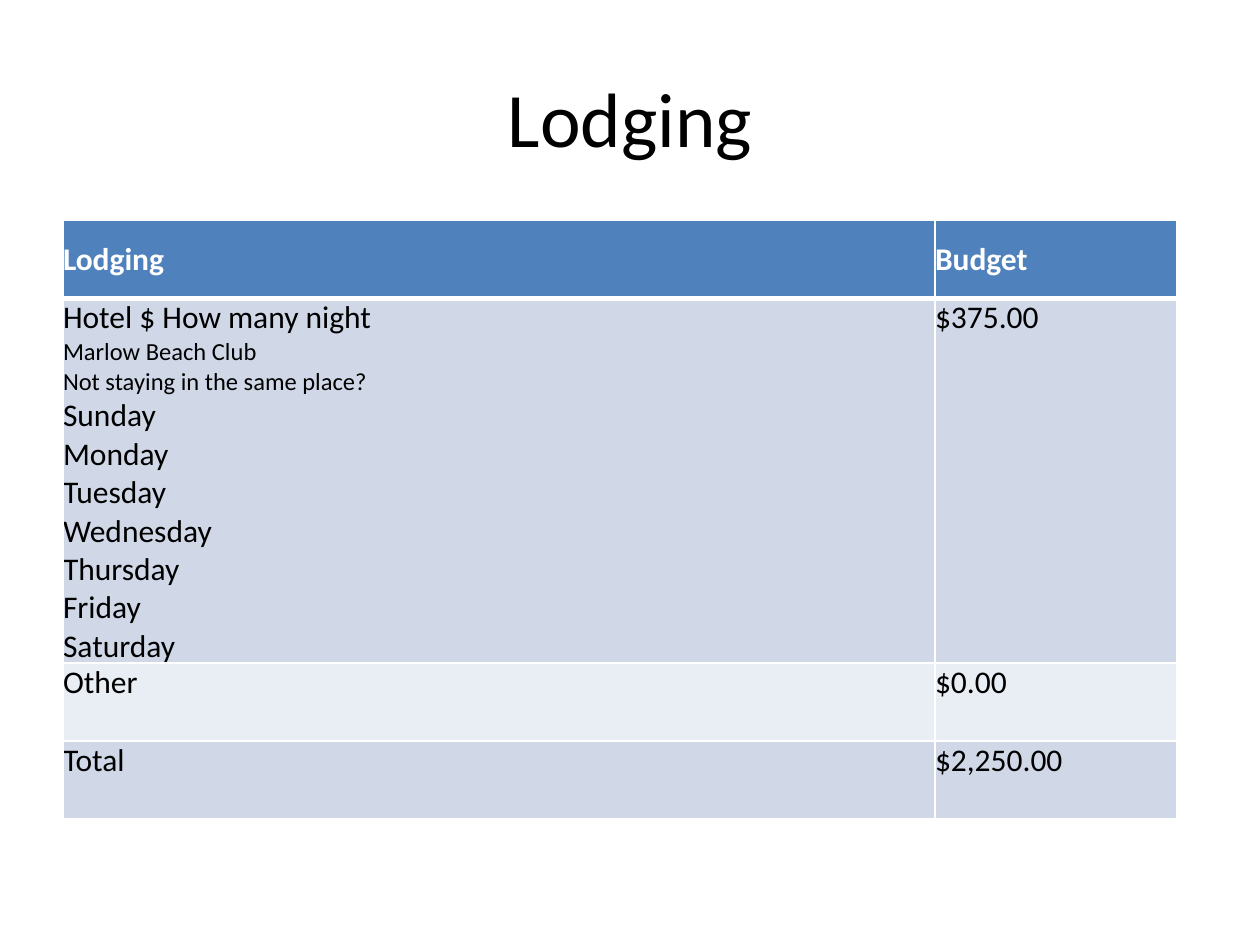
from dataclasses import dataclass

from lxml.etree import SubElement
from pptx import Presentation
from pptx.dml.color import RGBColor
from pptx.enum.text import MSO_ANCHOR as Anchor, PP_ALIGN as Align
from pptx.oxml.ns import qn
from pptx.util import Cm, Pt

FONT = "Calibri"
BLACK, WHITE = "000000", "FFFFFF"
HEADER_BLUE, BAND_DARK, BAND_LIGHT = "4F81BD", "D0D8E8", "E9EDF4"
COLUMN_WIDTHS = (17.58, 4.87)
DAYS = ("Sunday", "Monday", "Tuesday", "Wednesday", "Thursday", "Friday", "Saturday")


@dataclass(frozen=True)
class Line:
    text: str
    size: float = 18
    color: str = BLACK
    bold: bool = False


@dataclass(frozen=True)
class BudgetRow:
    item: tuple[Line, ...]
    amount: Line
    fill: str
    height: float = 1.57
    anchor: Anchor = Anchor.TOP
    rule_below: float = 1


BUDGET = (
    BudgetRow(
        (Line("Lodging", color=WHITE, bold=True),),
        Line("Budget", color=WHITE, bold=True),
        HEADER_BLUE,
        anchor=Anchor.MIDDLE,
        rule_below=3,
    ),
    BudgetRow(
        (
            Line("Hotel $ How many night"),
            Line("Marlow Beach Club", 14),
            Line("Not staying in the same place?", 14),
            *(Line(day) for day in DAYS),
        ),
        Line("$375.00"),
        BAND_DARK,
        height=7.35,
    ),
    BudgetRow((Line("Other"),), Line("$0.00"), BAND_LIGHT),
    BudgetRow((Line("Total"),), Line("$2,250.00"), BAND_DARK),
)


def rgb(color: str) -> RGBColor:
    return RGBColor.from_string(color)


def write_lines(frame, lines: tuple[Line, ...], align: Align = Align.LEFT) -> None:
    for index, line in enumerate(lines):
        paragraph = frame.add_paragraph() if index else frame.paragraphs[0]
        paragraph.alignment = align
        run = paragraph.add_run()
        run.text = line.text
        run.font.name = FONT
        run.font.size = Pt(line.size)
        run.font.bold = line.bold
        run.font.color.rgb = rgb(line.color)


def set_borders(cell, top: float, bottom: float) -> None:
    """Draw white rules on all four sides, with widths in points."""
    properties = cell._tc.get_or_add_tcPr()
    for side, width in (("L", 1), ("R", 1), ("T", top), ("B", bottom)):
        rule = SubElement(properties, qn(f"a:ln{side}"), w=str(Pt(width)))
        fill = SubElement(rule, qn("a:solidFill"))
        SubElement(fill, qn("a:srgbClr"), val=WHITE)


def add_title(slide, title: Line) -> None:
    box = slide.shapes.add_textbox(Cm(1.27), Cm(0.76), Cm(22.86), Cm(3.18))
    box.text_frame.word_wrap = True
    box.text_frame.vertical_anchor = Anchor.MIDDLE
    write_lines(box.text_frame, (title,), Align.CENTER)


def add_budget_table(slide, rows: tuple[BudgetRow, ...]) -> None:
    table = slide.shapes.add_table(
        len(rows), len(COLUMN_WIDTHS), Cm(1.27), Cm(4.45),
        Cm(sum(COLUMN_WIDTHS)), Cm(sum(row.height for row in rows)),
    ).table
    for column, width in zip(table.columns, COLUMN_WIDTHS):
        column.width = Cm(width)
    rule_above = 1
    for index, row in enumerate(rows):
        table.rows[index].height = Cm(row.height)
        for cell, lines in zip(table.rows[index].cells, (row.item, (row.amount,))):
            cell.margin_left = cell.margin_right = Cm(0)
            cell.margin_top = cell.margin_bottom = Cm(0)
            cell.vertical_anchor = row.anchor
            set_borders(cell, rule_above, row.rule_below)
            cell.fill.solid()
            cell.fill.fore_color.rgb = rgb(row.fill)
            write_lines(cell.text_frame, lines)
        rule_above = row.rule_below


def main() -> None:
    deck = Presentation()
    deck.slide_width, deck.slide_height = Cm(25.4), Cm(19.05)
    slide = deck.slides.add_slide(deck.slide_layouts[6])
    add_title(slide, Line("Lodging", 44))
    add_budget_table(slide, BUDGET)
    deck.save("out.pptx")


if __name__ == "__main__":
    main()
